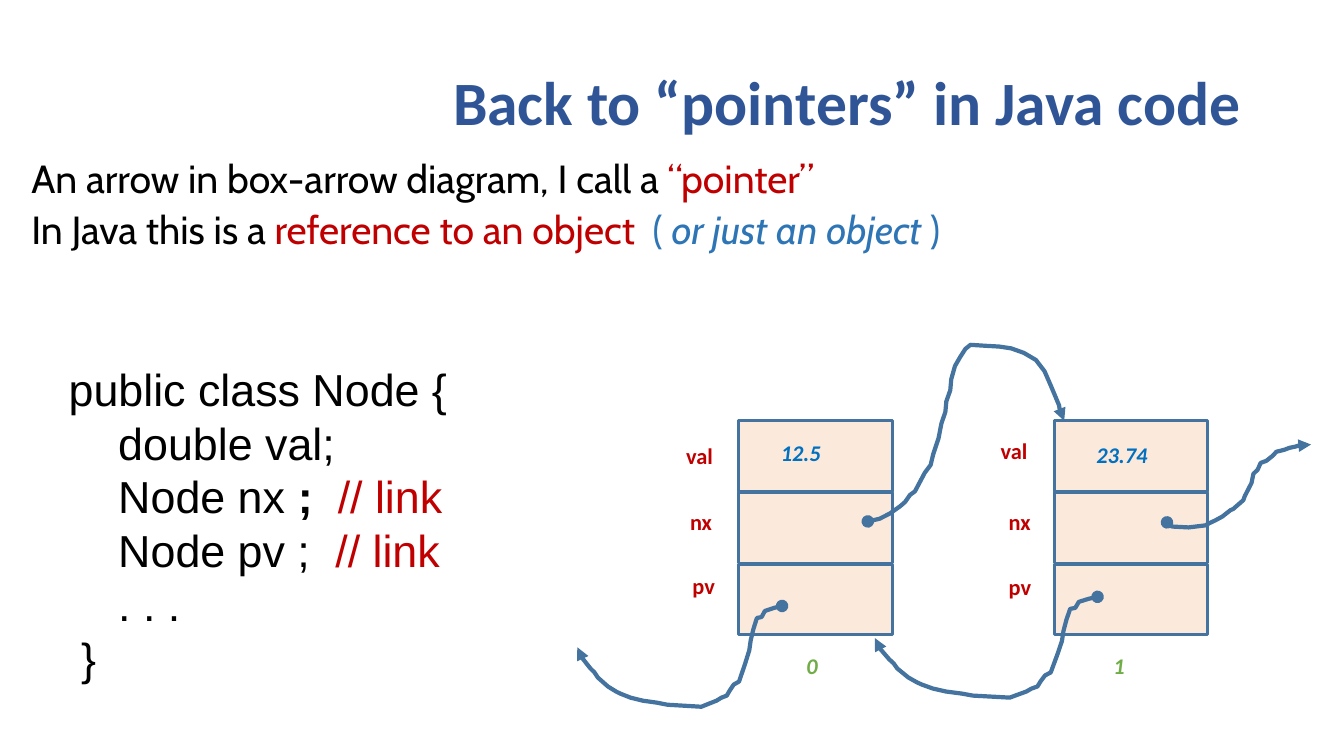
from dataclasses import dataclass

import lxml.etree
import pptx
import pptx.dml.color
import pptx.enum.shapes
import pptx.enum.text
import pptx.oxml.ns
import pptx.util

Cm = pptx.util.Cm
Pt = pptx.util.Pt
RGBColor = pptx.dml.color.RGBColor
Align = pptx.enum.text.PP_ALIGN
Anchor = pptx.enum.text.MSO_ANCHOR

NAVY = RGBColor(0x2F, 0x55, 0x97)
BLACK = RGBColor(0x00, 0x00, 0x00)
RED = RGBColor(0xC0, 0x00, 0x00)
BLUE = RGBColor(0x2E, 0x75, 0xB6)
VALUE_BLUE = RGBColor(0x00, 0x70, 0xC0)
GREEN = RGBColor(0x70, 0xAD, 0x47)
STEEL = RGBColor(0x43, 0x73, 0x9E)
PEACH = RGBColor(0xF4, 0xB1, 0x83)

CELL_WIDTH, CELL_HEIGHT, CELL_PITCH, CELLS_TOP = 3.87, 1.78, 1.81, 10.6

Points = list[tuple[float, float]]

# Arrow paths in percent of the arrow's own width and height.
PREVIOUS_PATH: Points = [
    (100, 0), (96, 2), (91.6, 5), (90, 11), (87.7, 12), (86, 23), (84.7, 34),
    (84, 44), (82, 57), (79, 75), (76.4, 78), (74.4, 84), (73, 89), (70.4, 91),
    (68, 94), (63, 98), (60.6, 100), (44, 98), (39, 96), (32, 94), (26, 91),
    (21, 87), (19, 85), (15, 80), (10, 71), (8.4, 66), (6.4, 62), (2.5, 52),
    (1, 46), (0, 41)]
NEXT_PATH: Points = [
    (0, 100), (6, 98.5), (11.3, 95.5), (16.4, 91.5), (19, 89), (21.5, 85),
    (24, 83), (29, 72.5), (32, 68), (33.3, 62), (36, 53), (37.5, 44.5),
    (39.5, 38), (40, 32), (42, 25.7), (42.5, 19.5), (44.4, 12), (47, 7),
    (49.7, 2.3), (52.3, 0), (60.5, 0.6), (67, 1), (73, 2), (79.5, 4.6),
    (85.6, 8.6), (90, 15), (93.3, 23.4), (97.4, 34.3), (98.2, 40), (100, 43)]
OUTGOING_PATH: Points = [
    (0, 94), (3.5, 99), (15, 100), (26.6, 97.6), (29.4, 95), (33.6, 91.6),
    (38.5, 87), (44, 79.5), (46, 78), (53, 67.5), (54, 62.7), (58.7, 47),
    (60, 36), (63, 31), (65, 23), (69, 20.5), (73.4, 14.5), (76, 9.6),
    (79, 8.4), (82, 7), (85, 5), (89, 3.6), (94, 1), (100, 1)]


@dataclass
class Area:
    left: float
    top: float
    width: float
    height: float


@dataclass
class Span:
    text: str
    color: RGBColor = BLACK
    bold: bool = False
    italic: bool = False


@dataclass
class Label:
    text: str
    left: float
    top: float


@dataclass
class Node:
    left: float
    value: Label
    fields: list[Label]
    index: Label


@dataclass
class Arrow:
    area: Area
    points: Points


NODES = [
    Node(18.62, Label("12.5", 19.43, 10.95),
         [Label("val", 17.04, 11.02), Label("nx", 17.14, 12.67), Label("pv", 17.2, 14.3)],
         Label("0", 20.07, 16.31)),
    Node(26.57, Label("23.74", 27.38, 11),
         [Label("val", 24.97, 10.9), Label("nx", 25.17, 12.67), Label("pv", 25.17, 14.33)],
         Label("1", 27.81, 16.31)),
]
ARROWS = [
    Arrow(Area(14.55, 15.27, 5.16, 2.54), PREVIOUS_PATH),
    Arrow(Area(22.05, 15.04, 5.61, 2.54), PREVIOUS_PATH),
    Arrow(Area(21.87, 8.69, 4.95, 4.45), NEXT_PATH),
    Arrow(Area(29.41, 11.18, 3.63, 2.11), OUTGOING_PATH),
]
TITLE = [[Span("Back to “pointers” in Java code", NAVY, bold=True)]]
EXPLANATION = [
    [Span("An arrow in box-arrow diagram, I call a "), Span("“pointer”", RED)],
    [Span("In Java this is a "), Span("reference to an object  ", RED), Span("( ", BLUE),
     Span("or just an object ", BLUE, italic=True), Span(")", BLUE)],
]
CODE = [
    [Span("public class Node {")],
    [Span("    double val;")],
    [Span("    Node nx "), Span(";  ", bold=True), Span("// link", RED)],
    [Span("    Node pv ;  "), Span("// link", RED)],
    [Span("    . . .")],
    [Span(" }")],
]


def add_text(page, area: Area, lines: list[list[Span]], font: str, size: float,
             anchor=Anchor.TOP, paragraph_format: dict | None = None, gap: float = 0) -> None:
    box = page.shapes.add_textbox(Cm(area.left), Cm(area.top), Cm(area.width), Cm(area.height))
    frame = box.text_frame
    frame.word_wrap = True
    frame.vertical_anchor = anchor
    for number, line in enumerate(lines):
        para = frame.add_paragraph() if number else frame.paragraphs[0]
        for name, setting in (paragraph_format or {}).items():
            setattr(para, name, setting)
        if number and gap:
            para.space_before = Pt(gap)
        for span in line:
            run = para.add_run()
            run.text = span.text
            run_format = {"name": font, "size": Pt(size), "bold": span.bold, "italic": span.italic}
            for name, setting in run_format.items():
                setattr(run.font, name, setting)
            run.font.color.rgb = span.color


def add_label(page, label: Label, width: float, color: RGBColor, italic: bool = False) -> None:
    span = Span(label.text, color, bold=True, italic=italic)
    add_text(page, Area(label.left, label.top, width, 1.3), [[span]], "Calibri", 16)


def add_cell(page, left: float, top: float) -> None:
    cell = page.shapes.add_shape(pptx.enum.shapes.MSO_SHAPE.RECTANGLE, Cm(left), Cm(top),
                                 Cm(CELL_WIDTH), Cm(CELL_HEIGHT))
    cell.shadow.inherit = False
    cell.fill.solid()
    cell.fill.fore_color.rgb = PEACH
    color = cell.fill._xPr.find(".//" + pptx.oxml.ns.qn("a:srgbClr"))
    lxml.etree.SubElement(color, pptx.oxml.ns.qn("a:alpha"), val="28000")
    cell.line.color.rgb = STEEL
    cell.line.width = Pt(2)


def add_node(page, node: Node) -> None:
    for row in range(len(node.fields)):
        add_cell(page, node.left, CELLS_TOP + row * CELL_PITCH)
    add_label(page, node.value, 2.2, VALUE_BLUE, italic=True)
    for field_label in node.fields:
        add_label(page, field_label, 1.88, RED)
    add_label(page, node.index, 1.37, GREEN, italic=True)


def add_arrow(page, arrow: Arrow) -> None:
    area = arrow.area
    corners = [(Cm(area.left + area.width * x / 100), Cm(area.top + area.height * y / 100))
               for x, y in arrow.points]
    builder = page.shapes.build_freeform(*corners[0])
    builder.add_line_segments(corners[1:], close=False)
    curve = builder.convert_to_shape()
    curve.shadow.inherit = False
    curve.fill.background()
    curve.line.color.rgb = STEEL
    curve.line.width = Pt(3)
    line = curve.line._get_or_add_ln()
    lxml.etree.SubElement(line, pptx.oxml.ns.qn("a:round"))
    for end, kind in (("a:headEnd", "oval"), ("a:tailEnd", "triangle")):
        lxml.etree.SubElement(line, pptx.oxml.ns.qn(end), type=kind)


def main() -> None:
    deck = pptx.Presentation()
    deck.slide_width, deck.slide_height = Cm(33.87), Cm(19.05)
    page = deck.slides.add_slide(deck.slide_layouts[6])
    add_text(page, Area(2.33, 1.01, 29.21, 3.31), TITLE, "Calibri", 44, Anchor.MIDDLE,
             {"alignment": Align.RIGHT, "line_spacing": 0.9})
    add_text(page, Area(0.54, 3.9, 29.94, 3.9), EXPLANATION, "Cabin", 28,
             paragraph_format={"line_spacing": 0.9}, gap=6)
    for node in NODES:
        add_node(page, node)
    for arrow in ARROWS:
        add_arrow(page, arrow)
    add_text(page, Area(1.48, 8.95, 12.6, 8.45), CODE, "Arial", 32, Anchor.MIDDLE)
    deck.save("out.pptx")


if __name__ == "__main__":
    main()
